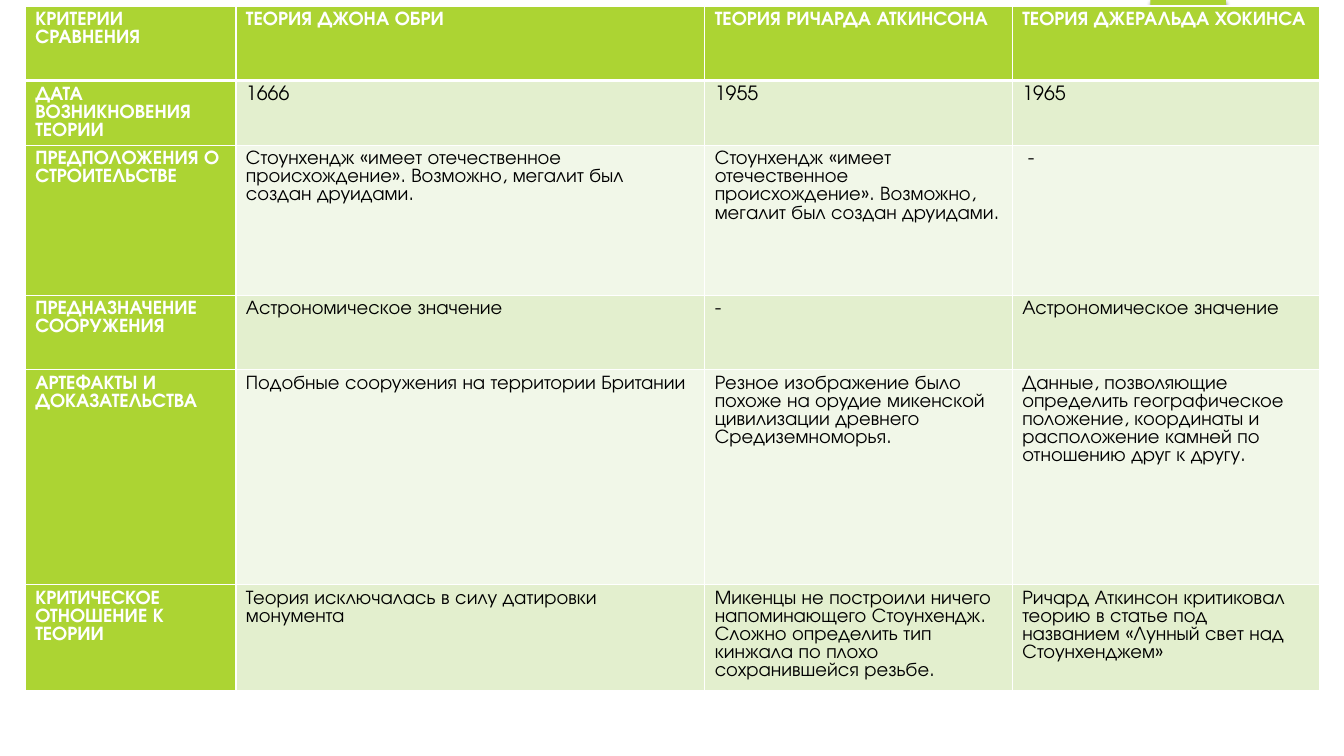
"""Build a slide that compares three theories about Stonehenge."""
from dataclasses import dataclass

from lxml import etree
from pptx import Presentation
from pptx.dml.color import RGBColor
from pptx.enum.shapes import MSO_SHAPE
from pptx.oxml.ns import qn
from pptx.util import Emu, Pt

RECT = MSO_SHAPE.RECTANGLE
PX = 9144


@dataclass(frozen=True)
class Theme:
    font: str = "TeX Gyre Adventor"
    size: int = 14
    green: str = "ACD433"
    bands: tuple[str, str] = ("F1F7E8", "E3EFCE")
    white: str = "FFFFFF"
    black: str = "000000"
    line: int = 1
    rule: int = 3


@dataclass(frozen=True)
class Row:
    high: int
    texts: tuple[str, str, str, str]


THEME = Theme()
COLS = (209, 465, 305, 305)
DRUIDS = ("Стоунхендж «имеет отечественное происхождение». "
          "Возможно, мегалит был создан друидами.")
ROWS = (
    Row(74, ("КРИТЕРИИ СРАВНЕНИЯ", "ТЕОРИЯ ДЖОНА ОБРИ",
             "ТЕОРИЯ РИЧАРДА АТКИНСОНА", "ТЕОРИЯ ДЖЕРАЛЬДА ХОКИНСА")),
    Row(32, ("ДАТА ВОЗНИКНОВЕНИЯ ТЕОРИИ", "1666", "1955", "1965")),
    Row(149, ("ПРЕДПОЛОЖЕНИЯ О СТРОИТЕЛЬСТВЕ", DRUIDS, DRUIDS, " -")),
    Row(74, ("ПРЕДНАЗНАЧЕНИЕ СООРУЖЕНИЯ", "Астрономическое значение",
             "-", "Астрономическое значение")),
    Row(213, ("АРТЕФАКТЫ И ДОКАЗАТЕЛЬСТВА",
              "Подобные сооружения на территории Британии",
              "Резное изображение было похоже на орудие микенской "
              "цивилизации древнего Средиземноморья.",
              "Данные, позволяющие определить географическое положение, "
              "координаты и расположение камней по отношению друг к другу.")),
    Row(105, ("КРИТИЧЕСКОЕ ОТНОШЕНИЕ К ТЕОРИИ",
              "Теория исключалась в силу датировки монумента",
              "Микенцы не построили ничего напоминающего Стоунхендж. "
              "Сложно определить тип кинжала по плохо сохранившейся резьбе.",
              "Ричард Аткинсон критиковал теорию в статье под названием "
              "«Лунный свет над Стоунхенджем»")),
)


def px(num: int) -> Emu:
    """Turn px into EMU."""
    return Emu(num * PX)


def tint(item, color: str) -> None:
    """Fill a shape or a cell with one colour."""
    item.fill.solid()
    item.fill.fore_color.rgb = RGBColor.from_string(color)


def node(root, tag: str, **attrs):
    """Add an XML child with attributes."""
    return etree.SubElement(root, qn(tag), {k: str(v) for k, v in attrs.items()})


def write(frame, text: str, *, color: str, bold: bool) -> None:
    """Put formatted text into a frame."""
    para = frame.paragraphs[0]
    run = para.add_run()
    run.text = text
    font = run.font
    font.name, font.size, font.bold = THEME.font, Pt(THEME.size), bold
    font.color.rgb = RGBColor.from_string(color)


def edge(cell, base: int) -> None:
    """Draw the four borders of a cell."""
    props = cell._tc.get_or_add_tcPr()
    widths = {"a:lnL": THEME.line, "a:lnR": THEME.line,
              "a:lnT": THEME.line, "a:lnB": base}
    for spot, (tag, width) in enumerate(widths.items()):
        line = etree.Element(qn(tag), {"w": str(Pt(width))})
        node(node(line, "a:solidFill"), "a:srgbClr", val=THEME.white)
        props.insert(spot, line)


def draw_tab(slide) -> None:
    """Draw the green tab with its soft shadow."""
    tab = slide.shapes.add_shape(RECT, px(1141), px(0), px(75), px(125))
    tint(tab, THEME.green)
    tab.line.fill.background()
    tab.shadow.inherit = False
    glow = node(tab._element.spPr.find(qn("a:effectLst")), "a:outerShdw",
                blurRad=Pt(3), dist=Pt(2), dir=5400000, rotWithShape=0)
    shade = node(glow, "a:srgbClr", val=THEME.black)
    node(shade, "a:alpha", val=45000)


def draw_table(slide) -> None:
    """Draw the table of theories."""
    high = sum(row.high for row in ROWS)
    table = slide.shapes.add_table(len(ROWS), len(COLS), px(25), px(6),
                                   px(sum(COLS)), px(high)).table
    for col, width in zip(table.columns, COLS):
        col.width = px(width)
    for y, row in enumerate(ROWS):
        table.rows[y].height = px(row.high)
        for x, text in enumerate(row.texts):
            cell = table.cell(y, x)
            head = y == 0 or x == 0
            tint(cell, THEME.green if head else THEME.bands[y % 2])
            edge(cell, THEME.line if y else THEME.rule)
            write(cell.text_frame, text, bold=head,
                  color=THEME.white if head else THEME.black)


def main() -> None:
    """Build and save the slide."""
    deck = Presentation()
    deck.slide_width, deck.slide_height = px(1333), px(750)
    slide = deck.slides.add_slide(deck.slide_layouts[6])
    tint(slide.background, THEME.white)
    draw_tab(slide)
    draw_table(slide)
    deck.save("out.pptx")


if __name__ == "__main__":
    main()
